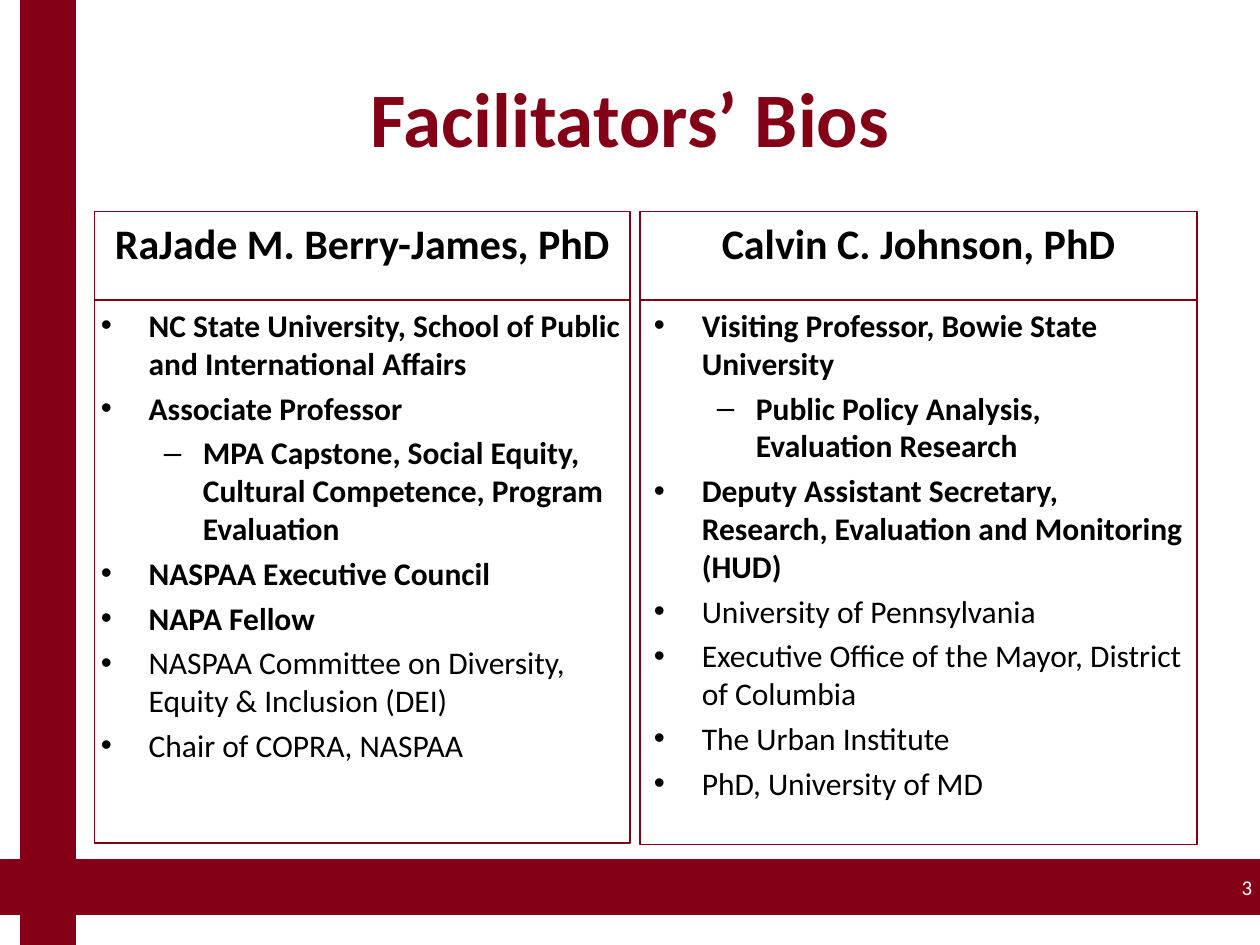
from pptx import Presentation
from pptx.dml.color import RGBColor
from pptx.enum.shapes import MSO_SHAPE
from pptx.enum.text import MSO_ANCHOR, PP_ALIGN
from pptx.oxml.ns import qn
from pptx.util import Inches, Pt
from lxml.etree import SubElement

COLORS = {"maroon": "840017", "black": "000000", "white": "FFFFFF"}
FONT = "Calibri"
LEVELS = [("•", 0.38, 0.38), ("–", 0.81, 0.31)]

BERRY_JAMES = [
    ("NC State University, School of Public and International Affairs", 0, True),
    ("Associate Professor", 0, True),
    ("MPA Capstone, Social Equity, Cultural Competence, Program Evaluation", 1, True),
    ("NASPAA Executive Council", 0, True),
    ("NAPA Fellow", 0, True),
    ("NASPAA Committee on Diversity, Equity & Inclusion (DEI)", 0, False),
    ("Chair of COPRA, NASPAA", 0, False),
]
JOHNSON = [
    ("Visiting Professor, Bowie State University", 0, True),
    ("Public Policy Analysis, Evaluation Research", 1, True),
    ("Deputy Assistant Secretary, Research, Evaluation and Monitoring (HUD)", 0, True),
    ("University of Pennsylvania", 0, False),
    ("Executive Office of the Mayor, District of Columbia", 0, False),
    ("The Urban Institute", 0, False),
    ("PhD, University of MD", 0, False),
]


def color(name):
    """Return the named palette color."""
    return RGBColor.from_string(COLORS[name])


def add_rectangle(slide, box, line_width, filled=False):
    """Add a maroon-edged rectangle, solid or hollow."""
    shape = slide.shapes.add_shape(MSO_SHAPE.RECTANGLE, *map(Inches, box))
    shape.shadow.inherit = False
    if filled:
        shape.fill.solid()
        shape.fill.fore_color.rgb = color("maroon")
    else:
        shape.fill.background()
    shape.line.color.rgb = color("maroon")
    shape.line.width = Pt(line_width)
    return shape


def set_frame(shape, anchor, side_inset=0.05, wrap=True):
    """Set anchoring, insets and wrapping, and return the text frame."""
    frame = shape.text_frame
    frame.word_wrap = wrap
    frame.vertical_anchor = anchor
    frame.margin_left = frame.margin_right = Inches(side_inset)
    frame.margin_top = frame.margin_bottom = Inches(0.05)
    return frame


def write(paragraph, text, size, color_name, alignment, bold=False):
    """Fill one paragraph with uniformly styled text."""
    paragraph.text = text
    paragraph.alignment = alignment
    font = paragraph.font
    font.name, font.size, font.bold = FONT, Pt(size), bold
    font.color.rgb = color(color_name)


def add_bullet(paragraph, level):
    """Give a paragraph the bullet and hanging indent of its level."""
    character, margin, hanging = LEVELS[level]
    paragraph.level = level
    properties = paragraph._p.get_or_add_pPr()
    properties.set("marL", str(Inches(margin)))
    properties.set("indent", str(-Inches(hanging)))
    SubElement(properties, qn("a:buFont"), typeface="Arial")
    SubElement(properties, qn("a:buChar"), char=character)


def add_label(slide, box, text, size, color_name, alignment, bold=False, wrap=True):
    """Add a one-line, vertically centered text box."""
    label = slide.shapes.add_textbox(*map(Inches, box))
    frame = set_frame(label, MSO_ANCHOR.MIDDLE, wrap=wrap)
    write(frame.paragraphs[0], text, size, color_name, alignment, bold)


def add_bio(slide, box, name, entries, body_inset):
    """Add a facilitator's name box above a box of bulleted entries."""
    left, top, width, height = box
    header_height = 0.7
    header = add_rectangle(slide, (left, top, width, header_height), 0.75)
    frame = set_frame(header, MSO_ANCHOR.TOP, 0.1)
    write(frame.paragraphs[0], name, 24, "black", PP_ALIGN.CENTER, True)

    body_box = (left, top + header_height, width, height - header_height)
    body = add_rectangle(slide, body_box, 0.75)
    frame = set_frame(body, MSO_ANCHOR.TOP, body_inset)
    for index, (text, level, bold) in enumerate(entries):
        paragraph = frame.add_paragraph() if index else frame.paragraphs[0]
        add_bullet(paragraph, level)
        write(paragraph, text, 18, "black", PP_ALIGN.LEFT, bold)
        if index:
            paragraph.space_before = Pt(4)


def add_bars(slide, width, height):
    """Add the crossing maroon bars along the bottom and left."""
    thickness = 0.42
    add_rectangle(slide, (0, 6.83, width, thickness), 2, True)
    add_rectangle(slide, (0.17, 0, thickness, height), 2, True)


def main():
    """Build and save the facilitators slide."""
    width, height = 10, 7.5
    presentation = Presentation()
    presentation.slide_width = Inches(width)
    presentation.slide_height = Inches(height)
    slide = presentation.slides.add_slide(presentation.slide_layouts[6])
    add_bars(slide, width, height)
    add_label(slide, (0.5, 0.3, 9, 1.25), "Facilitators’ Bios", 44, "maroon",
              PP_ALIGN.CENTER, bold=True)
    add_label(slide, (9.79, 6.91, 0.2, 0.27), "3", 12, "white",
              PP_ALIGN.RIGHT, wrap=False)
    add_bio(slide, (0.75, 1.68, 4.25, 5.01), "RaJade M. Berry-James, PhD",
            BERRY_JAMES, 0.05)
    add_bio(slide, (5.08, 1.68, 4.42, 5.02), "Calvin C. Johnson, PhD",
            JOHNSON, 0.11)
    presentation.save("out.pptx")


if __name__ == "__main__":
    main()
